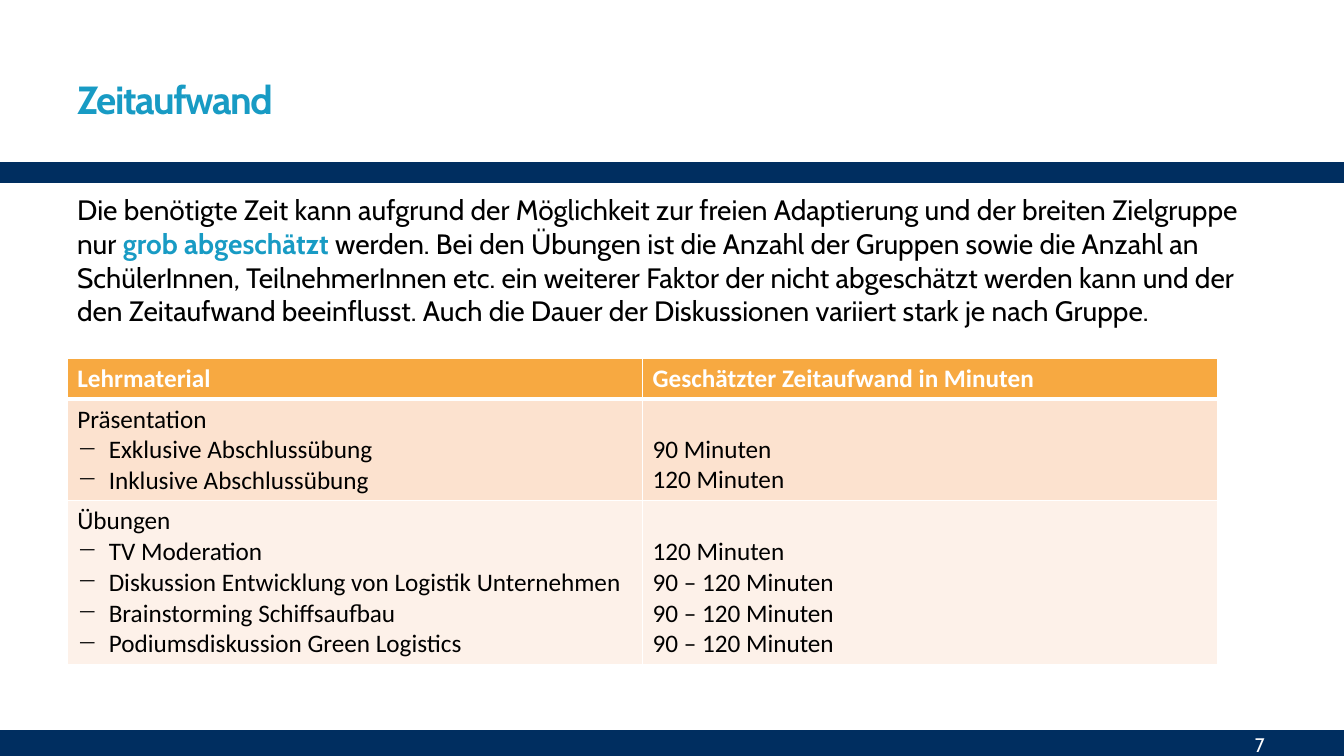
"""Build the slide on estimated time for the teaching material."""
from lxml.etree import SubElement
from pptx import Presentation
from pptx.dml.color import RGBColor
from pptx.enum.shapes import MSO_SHAPE
from pptx.enum.text import MSO_ANCHOR, PP_ALIGN
from pptx.oxml.ns import qn
from pptx.util import Pt

PX = 9525
NAVY, TEAL, WHITE, BLACK = "002E60", "189BC4", "FFFFFF", "000000"


def color(code):
    return RGBColor.from_string(code)


def write(para, text, tone, **form):
    run = para.add_run()
    run.text = text
    run.font.color.rgb = color(tone)
    for key, value in form.items():
        setattr(run.font, key, value)
    return run


deck = Presentation()
deck.slide_width, deck.slide_height = 1280 * PX, 720 * PX
slide = deck.slides.add_slide(deck.slide_layouts[6])

for left, top, width, height in [(-6, 697, 1300, 48), (0, 156, 1295, 17)]:
    band = slide.shapes.add_shape(
        MSO_SHAPE.RECTANGLE, left * PX, top * PX, width * PX, height * PX)
    band.shadow.inherit = False
    band.fill.solid()
    band.fill.fore_color.rgb = color(NAVY)
    band.line.color.rgb = color(NAVY)
    band.line.width = Pt(2.08)

body = [
    ("Die benötigte Zeit kann aufgrund der Möglichkeit zur freien Adaptierung "
     "und der breiten Zielgruppe nur ", BLACK, False),
    ("grob abgeschätzt ", TEAL, True),
    ("werden. Bei den Übungen ist die Anzahl der Gruppen sowie die Anzahl an "
     "SchülerInnen, TeilnehmerInnen etc. ein weiterer Faktor der nicht "
     "abgeschätzt werden kann und der den Zeitaufwand beeinflusst. Auch die "
     "Dauer der Diskussionen variiert stark je nach Gruppe.", BLACK, False),
]
texts = [
    ((64, 42, 666, 104), 28, MSO_ANCHOR.MIDDLE, PP_ALIGN.LEFT,
     [("Zeitaufwand", TEAL, True)]),
    ((64, 179, 1152, 501), 20, MSO_ANCHOR.TOP, PP_ALIGN.LEFT, body),
    ((1064, 692, 150, 35), 14, MSO_ANCHOR.MIDDLE, PP_ALIGN.RIGHT,
     [("7", WHITE, False)]),
]
for place, size, anchor, align, parts in texts:
    frame = slide.shapes.add_textbox(*[n * PX for n in place]).text_frame
    frame.word_wrap = True
    frame.vertical_anchor = anchor
    para = frame.paragraphs[0]
    para.alignment = align
    for text, tone, bold in parts:
        run = write(para, text, tone, name="Cabin", size=Pt(size), bold=bold)
        if size == 28:
            run._r.get_or_add_rPr().set("spc", "-100")

rows = [
    (39, "F7A941", ["Lehrmaterial"], ["Geschätzter Zeitaufwand in Minuten"]),
    (97, "FCE2CF",
     ["Präsentation", "Exklusive Abschlussübung", "Inklusive Abschlussübung"],
     ["90 Minuten", "120 Minuten"]),
    (156, "FDF1E9",
     ["Übungen", "TV Moderation",
      "Diskussion Entwicklung von Logistik Unternehmen",
      "Brainstorming Schiffsaufbau", "Podiumsdiskussion Green Logistics"],
     ["120 Minuten"] + ["90 – 120 Minuten"] * 3),
]
tall = sum(row[0] for row in rows)
table = slide.shapes.add_table(
    len(rows), 2, 64 * PX, 341 * PX, 1096 * PX, tall * PX).table

for r, (height, fill, *cells) in enumerate(rows):
    table.rows[r].height = height * PX
    head = r == 0
    edges = {"lnL": 1, "lnR": 1, "lnT": 3 if r == 1 else 1,
             "lnB": 3 if head else 1}
    for c, lines in enumerate(cells):
        cell = table.cell(r, c)
        cell.vertical_anchor = MSO_ANCHOR.BOTTOM if c else MSO_ANCHOR.TOP
        props = cell._tc.get_or_add_tcPr()
        for edge, width in edges.items():
            line = SubElement(props, qn("a:" + edge), w=str(Pt(width)))
            paint = SubElement(line, qn("a:solidFill"))
            SubElement(paint, qn("a:srgbClr"), val=WHITE)
        cell.fill.solid()
        cell.fill.fore_color.rgb = color(fill)
        for i, text in enumerate(lines):
            frame = cell.text_frame
            para = frame.add_paragraph() if i else frame.paragraphs[0]
            if i and c == 0:
                form = para._p.get_or_add_pPr()
                form.set("marL", str(30 * PX))
                form.set("indent", str(-30 * PX))
                SubElement(form, qn("a:buChar"), char="−")
            write(para, text, WHITE if head else BLACK,
                  name="Calibri", size=Pt(18), bold=head)

deck.save("out.pptx")
